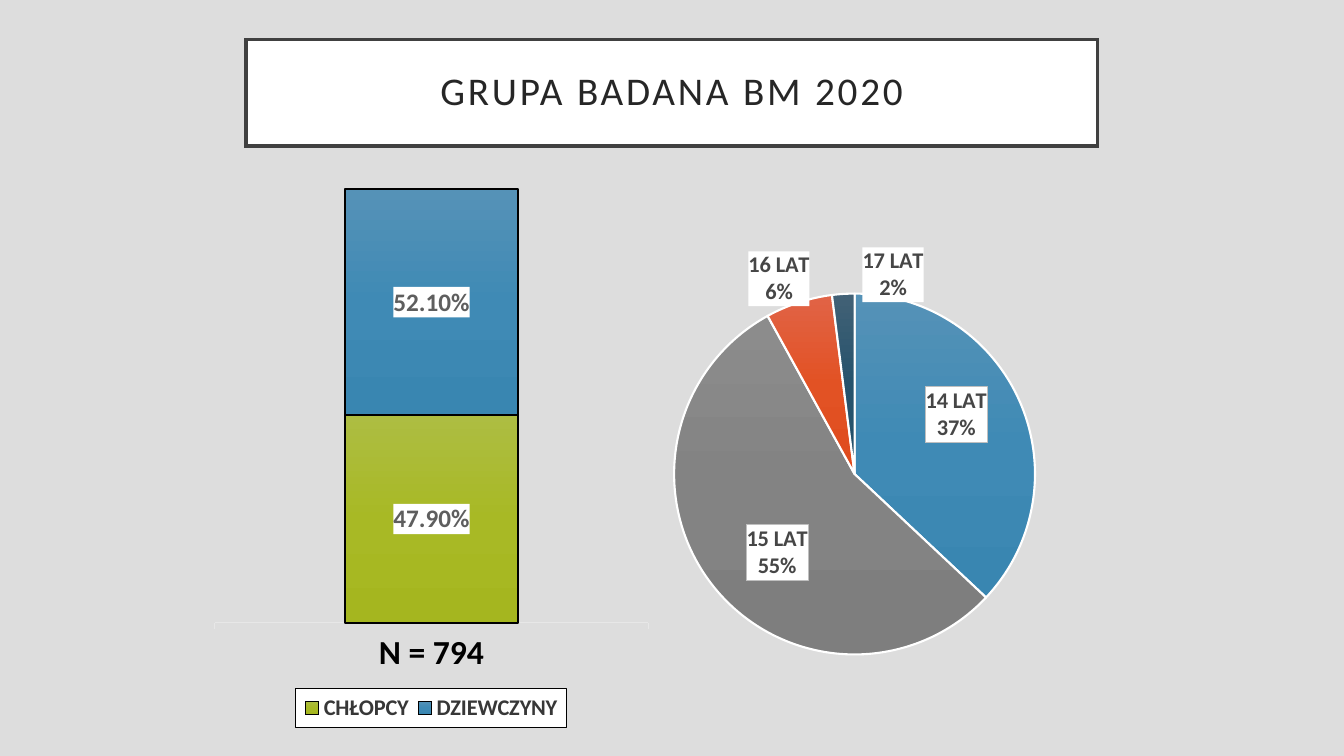
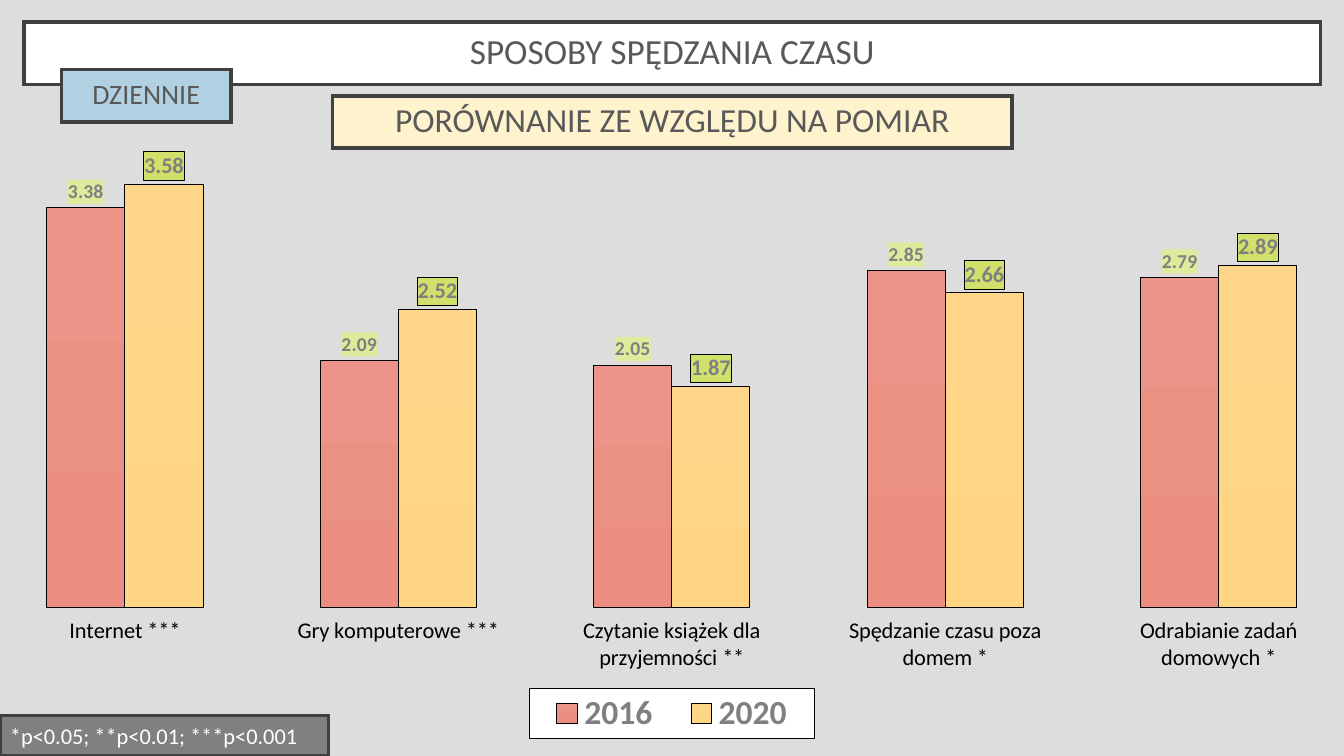
from copy import deepcopy
from dataclasses import dataclass, field
from typing import Any

from pptx import Presentation
from pptx.chart.data import CategoryChartData
from pptx.dml.color import RGBColor
from pptx.enum.chart import XL_CHART_TYPE, XL_LABEL_POSITION, XL_LEGEND_POSITION, XL_TICK_LABEL_POSITION, XL_TICK_MARK
from pptx.enum.shapes import MSO_SHAPE
from pptx.enum.text import MSO_ANCHOR, PP_ALIGN
from pptx.oxml import parse_xml
from pptx.oxml.ns import nsdecls, qn
from pptx.util import Pt

FONT = "Calibri"
BACKGROUND, WHITE, BLACK = "DDDDDD", "FFFFFF", "000000"
FRAME, GREY, TEXT_GREY = "404040", "808080", "595959"
BLUE = ("5592B7", "3F8AB5", "3986B1")
GREEN = ("ADBD42", "A8B925", "A5B61F")
SLATE = ("8C8C8C", "838383", "7E7E7E")
ORANGE = ("E16346", "E25224", "DF4B1D")
NAVY = ("426176", "26536C", "22506A")
CORAL = ("EB9487", "EB8E81")
SAND = ("FFD589", "FFD483")

Area = tuple[float, float, float, float]


@dataclass(frozen=True)
class Banner:
    """A framed box with optional centred text."""

    area: Area
    fill: str
    text: str = ""
    size: float = 24
    color: str = TEXT_GREY
    spacing: int = 0


@dataclass(frozen=True)
class LabelStyle:
    """The look of data labels."""

    size: float
    color: str
    fill: str
    position: XL_LABEL_POSITION
    number_format: str = "General"
    border: str = ""


@dataclass(frozen=True)
class Bars:
    """One column series."""

    name: str
    values: tuple[float, ...]
    colors: tuple[str, ...]
    label: LabelStyle


@dataclass(frozen=True)
class BarChart:
    """A column chart with a hidden value axis."""

    area: Area
    kind: XL_CHART_TYPE
    plot_area: Area
    legend_area: Area
    categories: tuple[str, ...]
    series: tuple[Bars, ...]
    maximum: float
    outline: float
    overlap: int
    axis_font: dict[str, Any] = field(default_factory=dict)
    axis_line: str = ""
    legend_size: float = 16
    legend_color: str = GREY


@dataclass(frozen=True)
class Slice:
    """One pie slice and the shift of its label."""

    name: str
    value: int
    colors: tuple[str, ...]
    position: str
    shift: tuple[float, float]
    border: str = ""


def rgb(color: str) -> RGBColor:
    """Turn a hex string into a colour."""
    return RGBColor.from_string(color)


def apply(target: Any, values: dict[str, Any]) -> None:
    """Set every named attribute on the target."""
    for name, value in values.items():
        setattr(target, name, value)


def style_font(font: Any, size: float, color: str, bold: bool = False) -> None:
    """Set the font of a text, label, axis or legend."""
    apply(font, {"name": FONT, "size": Pt(size), "bold": bold})
    font.color.rgb = rgb(color)


def paint(item: Any, fill: str, line: str, width: float) -> None:
    """Give a shape a plain fill and a sharp-cornered outline."""
    item.fill.solid()
    item.fill.fore_color.rgb = rgb(fill)
    item.line.color.rgb = rgb(line)
    item.line.width = Pt(width)
    outline = item._element.spPr.find(qn("a:ln"))
    outline.append(parse_xml(f'<a:miter {nsdecls("a")} lim="800000"/>'))


def shade(form: Any, colors: tuple[str, ...], line: str, width: float) -> None:
    """Give a chart part a downward gradient and an outline."""
    form.fill.gradient()
    form.fill.gradient_angle = 270
    first = form.fill.gradient_stops[0]._gs
    for _ in colors[2:]:
        first.addnext(deepcopy(first))
    for index, (stop, color) in enumerate(zip(form.fill.gradient_stops, colors)):
        stop.color.rgb = rgb(color)
        stop.position = index / (len(colors) - 1)
    form.line.color.rgb = rgb(line)
    form.line.width = Pt(width)


def frame_text(element: Any, fill: str, border: str = "") -> None:
    """Put a filled frame behind labels or a legend."""
    for old in element.findall(qn("c:spPr")):
        element.remove(old)
    stroke = f'<a:solidFill><a:srgbClr val="{border}"/></a:solidFill>' if border else "<a:noFill/>"
    element.find(qn("c:txPr")).addprevious(parse_xml(
        f'<c:spPr {nsdecls("c", "a")}><a:solidFill><a:srgbClr val="{fill}"/></a:solidFill>'
        f'<a:ln w="{Pt(0.75)}">{stroke}</a:ln></c:spPr>'))


def place_part(element: Any, index: int, area: Area, target: str = "") -> None:
    """Fix a plot area or legend as fractions of the chart."""
    for old in element.findall(qn("c:layout")):
        element.remove(old)
    edges = "".join(f'<c:{key} val="{value}"/>' for key, value in zip("xywh", area))
    element.insert(index, parse_xml(
        f'<c:layout {nsdecls("c")}><c:manualLayout>{target}'
        f'<c:xMode val="edge"/><c:yMode val="edge"/>{edges}</c:manualLayout></c:layout>'))


def style_labels(labels: Any, style: LabelStyle) -> None:
    """Format the data labels of a series."""
    apply(labels, {"show_value": True, "number_format": style.number_format,
                   "number_format_is_linked": False, "position": style.position})
    style_font(labels.font, style.size, style.color, True)
    frame_text(labels._element, style.fill, style.border)


def add_chart(page: Any, kind: XL_CHART_TYPE, area: Area, data: CategoryChartData, plot_area: Area) -> Any:
    """Add a chart with the shared base style."""
    chart = page.shapes.add_chart(kind, *map(Pt, area), data).chart
    chart.has_title = False
    chart.has_legend = False
    style_font(chart.font, 10, BLACK)
    place_part(chart._chartSpace.chart.plotArea, 0, plot_area, '<c:layoutTarget val="inner"/>')
    return chart


def add_bars(page: Any, model: BarChart) -> None:
    """Draw a column chart with legend and labels."""
    data = CategoryChartData()
    data.categories = model.categories
    for bars in model.series:
        data.add_series(bars.name, bars.values)
    chart = add_chart(page, model.kind, model.area, data, model.plot_area)
    plot = chart.plots[0]
    apply(plot, {"gap_width": 150, "overlap": model.overlap, "vary_by_categories": False})
    apply(chart.value_axis, {"has_major_gridlines": False, "visible": False,
                             "minimum_scale": 0, "maximum_scale": model.maximum})
    axis = chart.category_axis
    apply(axis, {"major_tick_mark": XL_TICK_MARK.OUTSIDE, "tick_label_position": XL_TICK_LABEL_POSITION.LOW})
    style_font(axis.tick_labels.font, **model.axis_font)
    if model.axis_line:
        axis.format.line.color.rgb = rgb(model.axis_line)
        axis.format.line.width = Pt(0.75)
    else:
        axis.format.line.fill.background()
    for series, bars in zip(plot.series, model.series):
        series.invert_if_negative = False
        shade(series.format, bars.colors, BLACK, model.outline)
        style_labels(series.data_labels, bars.label)
    chart.has_legend = True
    legend = chart.legend
    apply(legend, {"position": XL_LEGEND_POSITION.BOTTOM, "include_in_layout": False})
    style_font(legend.font, model.legend_size, model.legend_color, True)
    frame_text(legend._element, WHITE, BLACK)
    place_part(legend._element, 1, model.legend_area)


def add_pie(page: Any, area: Area, plot_area: Area, slices: tuple[Slice, ...], style: LabelStyle) -> None:
    """Draw a pie with individually placed labels."""
    data = CategoryChartData()
    data.categories = [item.name for item in slices]
    data.add_series("Series 1", [item.value for item in slices])
    chart = add_chart(page, XL_CHART_TYPE.PIE, area, data, plot_area)
    series = chart.plots[0].series[0]
    labels = series.data_labels
    style_labels(labels, style)
    apply(labels, {"show_value": False, "show_category_name": True, "show_percentage": True})
    group = labels._element
    group.find(qn("c:showBubbleSize")).addnext(parse_xml(f'<c:separator {nsdecls("c")}>\n</c:separator>'))
    shared = [part for part in group if part.tag != qn("c:showLeaderLines")]
    for index, item in enumerate(slices):
        shade(series.points[index].format, item.colors, WHITE, 1.5)
        across, down = item.shift
        label = parse_xml(
            f'<c:dLbl {nsdecls("c")}><c:idx val="{index}"/><c:layout><c:manualLayout>'
            f'<c:x val="{across}"/><c:y val="{down}"/></c:manualLayout></c:layout></c:dLbl>')
        label.extend(deepcopy(part) for part in shared)
        label.find(qn("c:dLblPos")).set("val", item.position)
        frame_text(label, style.fill, item.border)
        group.insert(index, label)


def add_banner(page: Any, banner: Banner) -> None:
    """Draw a framed box with its text."""
    box = page.shapes.add_shape(MSO_SHAPE.RECTANGLE, *map(Pt, banner.area))
    box.shadow.inherit = False
    paint(box, banner.fill, FRAME, 2.5)
    if not banner.text:
        return
    margins = dict.fromkeys(("margin_left", "margin_right", "margin_top", "margin_bottom"), Pt(14.4))
    apply(box.text_frame, {"word_wrap": True, "vertical_anchor": MSO_ANCHOR.MIDDLE, **margins})
    para = box.text_frame.paragraphs[0]
    apply(para, {"alignment": PP_ALIGN.CENTER, "line_spacing": 0.9})
    span = para.add_run()
    span.text = banner.text
    style_font(span.font, banner.size, banner.color)
    if banner.spacing:
        span._r.get_or_add_rPr().set("spc", str(banner.spacing * 100))


def add_note(page: Any, area: Area, text: str) -> None:
    """Add the significance note on one line."""
    box = page.shapes.add_textbox(*map(Pt, area))
    apply(box.text_frame, {"word_wrap": True, "vertical_anchor": MSO_ANCHOR.MIDDLE})
    span = box.text_frame.paragraphs[0].add_run()
    span.text = text
    style_font(span.font, 16, WHITE)


def add_page(deck: Any) -> Any:
    """Add a blank page with the shared background."""
    page = deck.slides.add_slide(deck.slide_layouts[6])
    page.background.fill.solid()
    page.background.fill.fore_color.rgb = rgb(BACKGROUND)
    return page


def build_group_page(deck: Any) -> None:
    """Build the page on the surveyed group."""
    page = add_page(deck)
    add_banner(page, Banner((175.7, 28.1, 608.4, 76.3), WHITE, "GRUPA BADANA BM 2020", 28, "262626", 2))
    slices = (
        Slice("14 LAT", 37, BLUE, "ctr", (0.03, -0.05), "BFBFBF"),
        Slice("15 LAT", 55, SLATE, "ctr", (-0.01, 0.05), "BFBFBF"),
        Slice("16 LAT", 6, ORANGE, "outEnd", (0.02, 0.02)),
        Slice("17 LAT", 2, NAVY, "outEnd", (0.08, 0.03)),
    )
    add_pie(page, (391, 156.2, 447.8, 334.8), (0.2, 0.16, 0.58, 0.77), slices,
            LabelStyle(16, "464646", WHITE, XL_LABEL_POSITION.OUTSIDE_END, "0%"))
    label = LabelStyle(18, "5E5E5E", WHITE, XL_LABEL_POSITION.CENTER, "0.00%")
    add_bars(page, BarChart(
        (146.9, 127.4, 322.6, 392.4), XL_CHART_TYPE.COLUMN_STACKED_100,
        (0.02, 0.02, 0.96, 0.79), (0.2, 0.93, 0.6, 0.07), ("N = 794",),
        (Bars("CHŁOPCY", (0.479,), GREEN, label), Bars("DZIEWCZYNY", (0.521,), BLUE, label)),
        1, 1.5, 100, {"size": 24, "color": BLACK, "bold": True}, "E7E7E7", 16, "373737"))


def build_time_page(deck: Any) -> None:
    """Build the page on ways of spending time."""
    page = add_page(deck)
    above = XL_LABEL_POSITION.OUTSIDE_END
    add_bars(page, BarChart(
        (-28.8, 87.1, 1017.4, 445), XL_CHART_TYPE.COLUMN_CLUSTERED,
        (0.02, 0.02, 0.96, 0.76), (0.4, 0.91, 0.2, 0.08),
        ("Internet ***", "Gry komputerowe ***", "Czytanie książek dla przyjemności **",
         "Spędzanie czasu poza domem *", "Odrabianie zadań domowych *"),
        (Bars("2016", (3.38, 2.09, 2.05, 2.85, 2.79), CORAL, LabelStyle(14, GREY, "E0EA9C", above)),
         Bars("2020", (3.58, 2.52, 1.87, 2.66, 2.89), SAND, LabelStyle(16, GREY, "D1E06B", above, border=BLACK))),
        4, 0.75, 0, {"size": 16, "color": BLACK}, legend_size=24))
    add_banner(page, Banner((17.3, 15.8, 925.9, 44.6), WHITE, "SPOSOBY SPĘDZANIA CZASU", 25.2))
    add_banner(page, Banner((0, 511.2, 234.7, 28.8), GREY))
    add_note(page, (0, 511.2, 244.1, 28.8), "*p<0.05; **p<0.01; ***p<0.001")
    add_banner(page, Banner((237.6, 68.4, 485.3, 37.4), "FFF3CD", "PORÓWNANIE ZE WZGLĘDU NA POMIAR"))
    add_banner(page, Banner((43.9, 49.7, 121, 37.4), "B1D1E3", "DZIENNIE", 20))


def main() -> None:
    """Build and save the deck."""
    deck = Presentation()
    apply(deck, {"slide_width": Pt(960), "slide_height": Pt(540)})
    build_group_page(deck)
    build_time_page(deck)
    deck.save("out.pptx")


if __name__ == "__main__":
    main()
